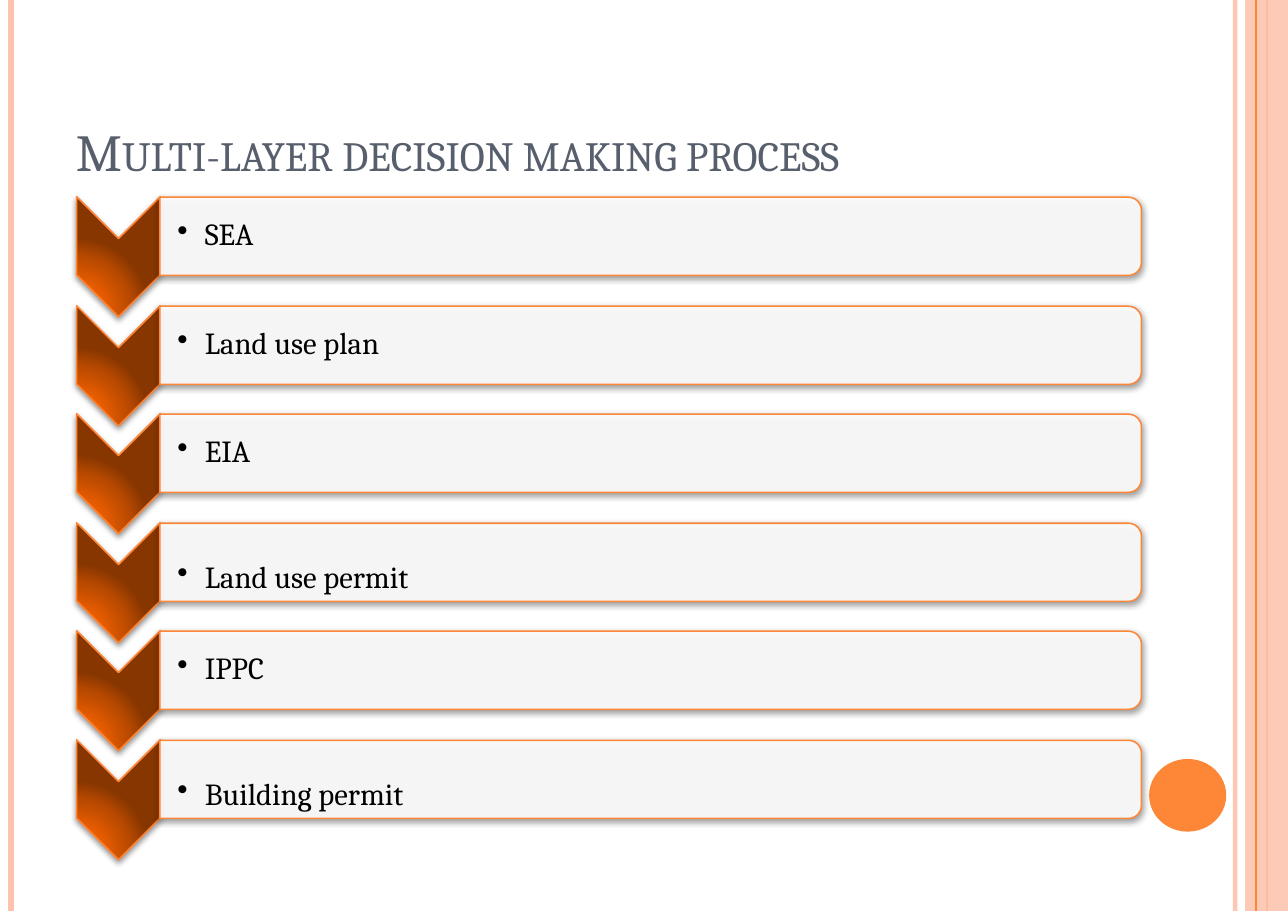
from dataclasses import dataclass

from pptx import Presentation
from pptx.dml.color import RGBColor
from pptx.enum.shapes import MSO_CONNECTOR as CONN, MSO_SHAPE as SHAPE
from pptx.enum.text import MSO_ANCHOR as ANCHOR, MSO_AUTO_SIZE as AUTO, PP_ALIGN as ALIGN
from pptx.oxml import parse_xml
from pptx.oxml.ns import nsdecls, qn
from pptx.util import Pt

PX = 9144
SLIDE_W, SLIDE_H = 1169, 827
FONT = "Cambria"

ORANGE = RGBColor(0xFE, 0x86, 0x37)
PEACH = RGBColor(0xFE, 0xC3, 0xAE)
SLATE = RGBColor(0x57, 0x5F, 0x6D)
WHITE = RGBColor(0xFF, 0xFF, 0xFF)
BLACK = RGBColor(0x00, 0x00, 0x00)
GLOW = RGBColor(0xFD, 0x64, 0x00)
EMBER = RGBColor(0xF4, 0x61, 0x00)
RUST = RGBColor(0xB7, 0x49, 0x00)
BROWN = RGBColor(0x87, 0x36, 0x00)
CHEVRON_STOPS = ((0, GLOW), (30, EMBER), (75, RUST), (100, BROWN))

ROW_TOP, LAST_ROW_OFFSET = 195, 493


@dataclass(frozen=True)
class Box:
    left: int
    top: int
    width: int
    height: int

    def emu(self) -> tuple[int, ...]:
        return tuple(v * PX for v in (self.left, self.top, self.width, self.height))


@dataclass(frozen=True)
class Rail:
    x: int
    color: RGBColor
    weight: float
    opacity: int = 100


@dataclass(frozen=True)
class Step:
    label: str
    drop: int = 0


OUTER_RAILS = (Rail(1121, PEACH, 3, 93), Rail(10, PEACH, 4.5), Rail(1150, ORANGE, 1.5))
INNER_RAIL = Rail(1140, ORANGE, 0.75)
STEPS = (
    Step("SEA"),
    Step("Land use plan"),
    Step("EIA"),
    Step("Land use permit", 15),
    Step("IPPC"),
    Step("Building permit", 15),
)


def set_opacity(element, percent: int) -> None:
    for color in element.iter(qn("a:srgbClr")):
        color.append(parse_xml(f'<a:alpha {nsdecls("a")} val="{percent * 1000}"/>'))


def add_rail(slide, rail: Rail) -> None:
    x = rail.x * PX
    line = slide.shapes.add_connector(CONN.STRAIGHT, x, 0, x, SLIDE_H * PX)
    line.line.color.rgb = rail.color
    line.line.width = Pt(rail.weight)
    sp_pr = line.element.spPr
    if rail.opacity < 100:
        set_opacity(sp_pr, rail.opacity)
    sp_pr.append(parse_xml(f'<a:effectLst {nsdecls("a")}/>'))


def add_solid(slide, kind: SHAPE, box: Box, color: RGBColor, opacity: int = 100):
    sp = slide.shapes.add_shape(kind, *box.emu())
    sp.shadow.inherit = False
    sp.fill.solid()
    sp.fill.fore_color.rgb = color
    if opacity < 100:
        set_opacity(sp.element.spPr, opacity)
    sp.line.fill.background()
    return sp


def turn_and_outline(sp) -> None:
    sp.rotation = 90
    sp.line.color.rgb = ORANGE
    sp.line.width = Pt(1)
    sp.element.spPr.find(qn("a:effectLst")).append(parse_xml(
        f'<a:outerShdw {nsdecls("a")} blurRad="{Pt(4)}" dist="{Pt(1.6)}" dir="5400000" '
        f'rotWithShape="0"><a:srgbClr val="{BLACK}"><a:alpha val="42000"/></a:srgbClr>'
        '</a:outerShdw>'))


def add_chevron(slide, box: Box) -> None:
    sp = add_solid(slide, SHAPE.CHEVRON, box, BROWN)
    stops = "".join(f'<a:gs pos="{pos * 1000}"><a:srgbClr val="{color}"/></a:gs>'
                    for pos, color in CHEVRON_STOPS)
    gradient = parse_xml(
        f'<a:gradFill {nsdecls("a")} rotWithShape="1"><a:gsLst>{stops}</a:gsLst>'
        '<a:path path="circle"><a:fillToRect l="5000" t="100000" r="120000" b="10000"/>'
        '</a:path></a:gradFill>')
    sp_pr = sp.element.spPr
    sp_pr.replace(sp_pr.find(qn("a:solidFill")), gradient)
    turn_and_outline(sp)


def set_frame(tf, anchor: ANCHOR, insets: tuple[int, int, int, int]) -> None:
    tf.word_wrap = True
    tf.auto_size = AUTO.NONE
    tf.vertical_anchor = anchor
    tf.margin_left, tf.margin_top, tf.margin_right, tf.margin_bottom = (v * PX for v in insets)


def set_font(p, size: int, color: RGBColor) -> None:
    p.alignment = ALIGN.LEFT
    for r in p.runs:
        r.font.name = FONT
        r.font.size = Pt(size)
        r.font.color.rgb = color


def add_label(slide, text: str, box: Box) -> None:
    tf = slide.shapes.add_textbox(*box.emu()).text_frame
    set_frame(tf, ANCHOR.MIDDLE, (16, 1, 1, 1))
    p = tf.paragraphs[0]
    p.text = text
    p.line_spacing = 0.9
    set_font(p, 20, BLACK)
    p_pr = p._p.get_or_add_pPr()
    p_pr.set("marL", str(25 * PX))
    p_pr.set("indent", str(-25 * PX))
    p_pr.append(parse_xml(f'<a:buChar {nsdecls("a")} char="•"/>'))


def add_step(slide, step: Step, top: int) -> None:
    add_chevron(slide, Box(53, top, 109, 76))
    bar = add_solid(slide, SHAPE.ROUND_2_SAME_RECTANGLE, Box(555, top - 426, 71, 891), WHITE, 90)
    turn_and_outline(bar)
    add_label(slide, step.label, Box(145, top - 13 + step.drop, 887, 64))


def set_title(slide, text: str) -> None:
    title = slide.shapes.title
    title.left, title.top, title.width, title.height = Box(58, 33, 955, 138).emu()
    tf = title.text_frame
    tf.text = text
    set_frame(tf, ANCHOR.BOTTOM, (11, 6, 11, 6))
    p = tf.paragraphs[0]
    set_font(p, 34, SLATE)
    for r in p.runs:
        r.font._element.set("cap", "small")


def main() -> None:
    prs = Presentation()
    prs.slide_width, prs.slide_height = SLIDE_W * PX, SLIDE_H * PX
    slide = prs.slides.add_slide(prs.slide_layouts[5])
    for rail in OUTER_RAILS:
        add_rail(slide, rail)
    add_solid(slide, SHAPE.RECTANGLE, Box(1130, 0, 39, SLIDE_H), PEACH, 87)
    add_rail(slide, INNER_RAIL)
    add_solid(slide, SHAPE.OVAL, Box(1043, 689, 70, 66), ORANGE)
    set_title(slide, "Multi-layer decision making process")
    for i, step in enumerate(STEPS):
        add_step(slide, step, ROW_TOP + round(i * LAST_ROW_OFFSET / (len(STEPS) - 1)))
    prs.save("out.pptx")


if __name__ == "__main__":
    main()
